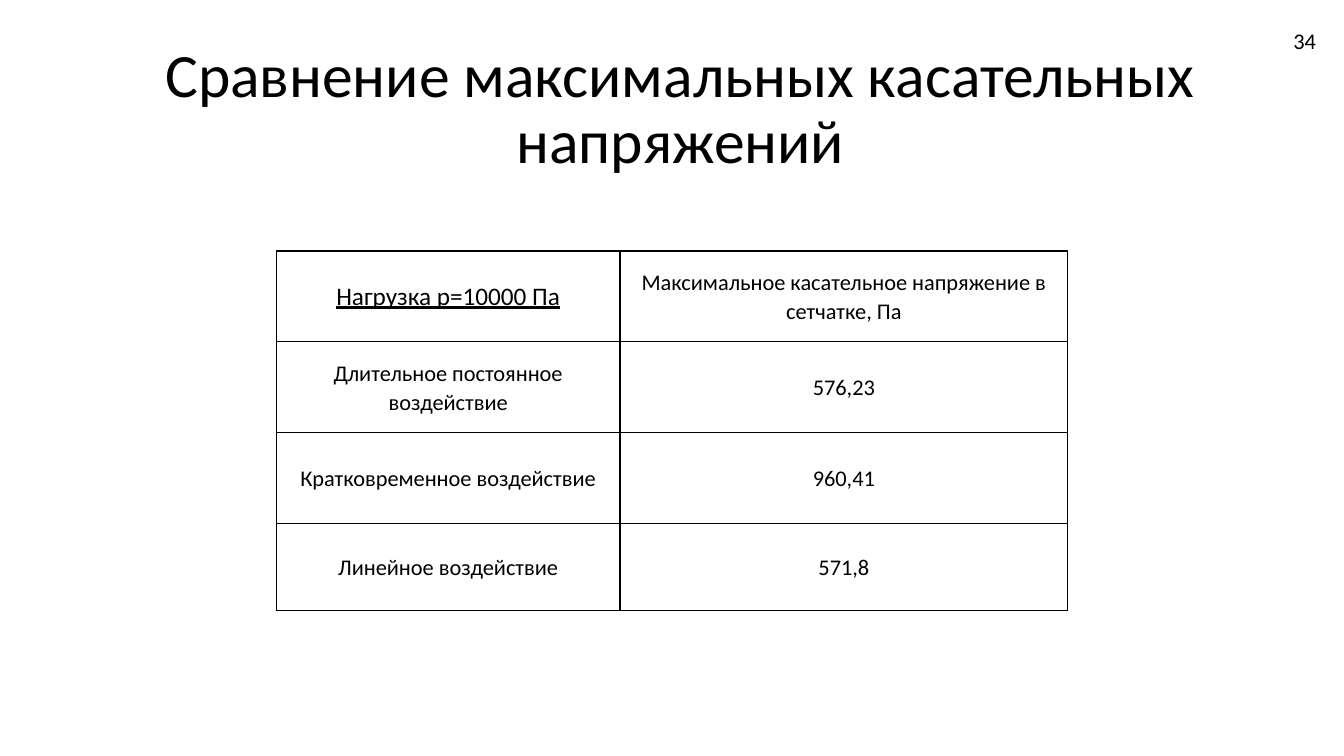
from dataclasses import dataclass

from lxml import etree
from pptx import Presentation
from pptx.dml.color import RGBColor
from pptx.enum.text import MSO_ANCHOR, PP_ALIGN
from pptx.oxml.ns import qn
from pptx.util import Emu, Pt

CENTER, RIGHT = PP_ALIGN.CENTER, PP_ALIGN.RIGHT
MIDDLE = MSO_ANCHOR.MIDDLE
EMU_PER_PX = 9144
TITLE_ONLY = 5


@dataclass(frozen=True)
class Theme:
    font: str = "Calibri"
    ink: str = "000000"
    paper: str = "FFFFFF"
    title_size: int = 44
    load_size: int = 18
    body_size: int = 16
    border_width: int = 1


THEME = Theme()

TITLE = "Сравнение максимальных касательных напряжений"
SLIDE_NUMBER = "34"
STRESS_ROWS = [
    ("Нагрузка p=10000 Па", "Максимальное касательное напряжение в сетчатке, Па"),
    ("Длительное постоянное воздействие", "576,23"),
    ("Кратковременное воздействие", "960,41"),
    ("Линейное воздействие", "571,8"),
]
COLUMN_WIDTHS = (341, 444)
ROW_HEIGHTS = (90, 90, 90, 87)


def px(length):
    return Emu(length * EMU_PER_PX)


def write_text(text_frame, text, size, alignment):
    text_frame.text = text
    text_frame.word_wrap = True
    paragraph = text_frame.paragraphs[0]
    paragraph.alignment = alignment
    font = paragraph.runs[0].font
    font.name = THEME.font
    font.size = Pt(size)
    font.color.rgb = RGBColor.from_string(THEME.ink)
    return paragraph


def add_borders(cell):
    properties = cell._tc.get_or_add_tcPr()
    for position, side in enumerate(("a:lnL", "a:lnR", "a:lnT", "a:lnB")):
        line = etree.Element(qn(side), w=str(Pt(THEME.border_width)))
        fill = etree.SubElement(line, qn("a:solidFill"))
        etree.SubElement(fill, qn("a:srgbClr"), val=THEME.ink)
        properties.insert(position, line)


def place_title(slide, left, top, width, height):
    title = slide.shapes.title
    title.left, title.top = px(left), px(top)
    title.width, title.height = px(width), px(height)
    paragraph = write_text(title.text_frame, TITLE, THEME.title_size, CENTER)
    paragraph.line_spacing = 0.9
    title.text_frame.vertical_anchor = MIDDLE


def fill_cell(cell, text, is_load, is_last_row):
    size = THEME.load_size if is_load else THEME.body_size
    paragraph = write_text(cell.text_frame, text, size, CENTER)
    if is_load:
        paragraph.runs[0].font.underline = True
    else:
        paragraph.line_spacing = 1.07
        paragraph.space_after = Pt(0 if is_last_row else 8)
    cell.vertical_anchor = MIDDLE
    cell.margin_left = cell.margin_right = px(10)
    cell.margin_top = cell.margin_bottom = 0
    cell.fill.background()
    add_borders(cell)


def place_stress_table(slide, left, top):
    frame = slide.shapes.add_table(
        len(STRESS_ROWS), len(COLUMN_WIDTHS), px(left), px(top),
        px(sum(COLUMN_WIDTHS)), px(sum(ROW_HEIGHTS)))
    table = frame.table
    table.first_row = False
    table.horz_banding = False
    for column, width in zip(table.columns, COLUMN_WIDTHS):
        column.width = px(width)
    for row, height in zip(table.rows, ROW_HEIGHTS):
        row.height = px(height)
    last_row = len(STRESS_ROWS) - 1
    for row_index, texts in enumerate(STRESS_ROWS):
        for column_index, text in enumerate(texts):
            is_load = row_index == column_index == 0
            fill_cell(table.cell(row_index, column_index), text,
                      is_load, row_index == last_row)


def place_slide_number(slide, left, top, width, height):
    box = slide.shapes.add_textbox(px(left), px(top), px(width), px(height))
    write_text(box.text_frame, SLIDE_NUMBER, THEME.body_size, RIGHT)
    box.text_frame.vertical_anchor = MIDDLE


def main():
    presentation = Presentation()
    presentation.slide_width = px(1333)
    presentation.slide_height = px(750)
    slide = presentation.slides.add_slide(presentation.slide_layouts[TITLE_ONLY])
    slide.background.fill.solid()
    slide.background.fill.fore_color.rgb = RGBColor.from_string(THEME.paper)
    place_title(slide, 100, 37, 1150, 145)
    place_stress_table(slide, 274, 249)
    place_slide_number(slide, 1015, 20, 300, 40)
    presentation.save("out.pptx")


if __name__ == "__main__":
    main()
